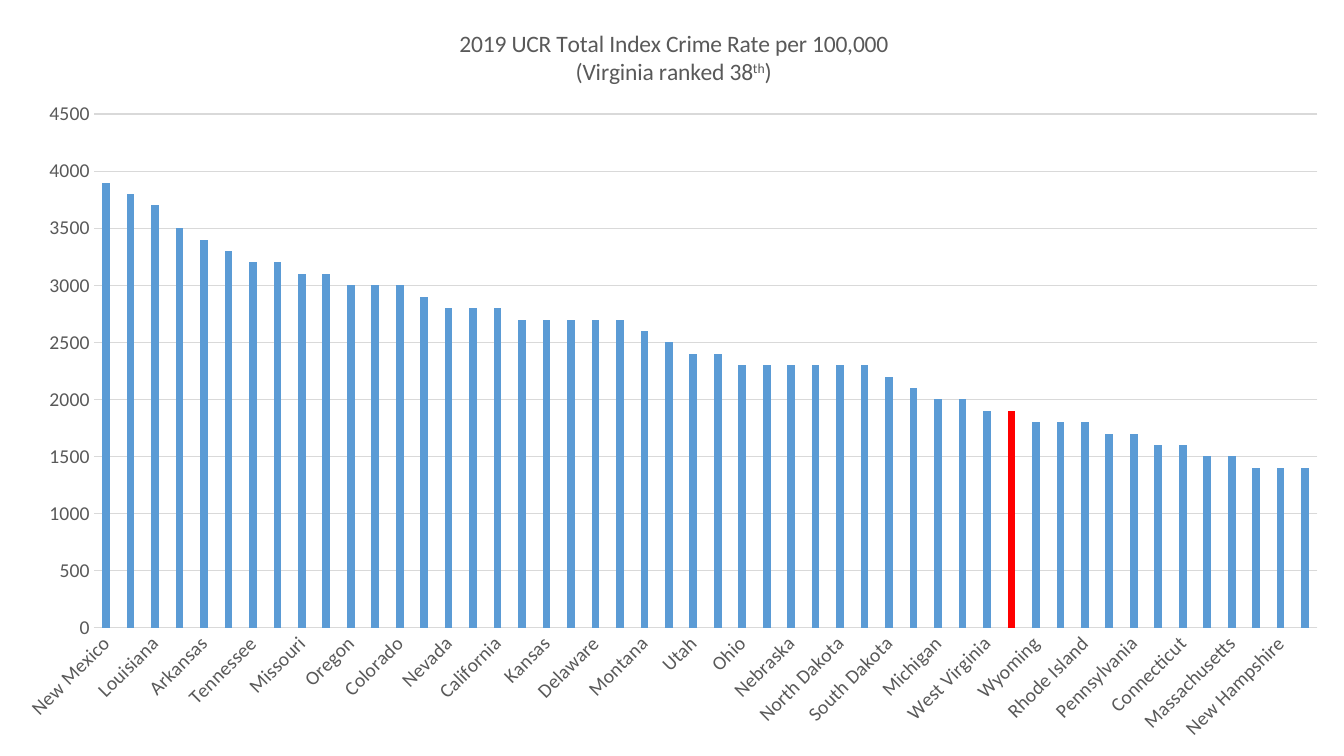
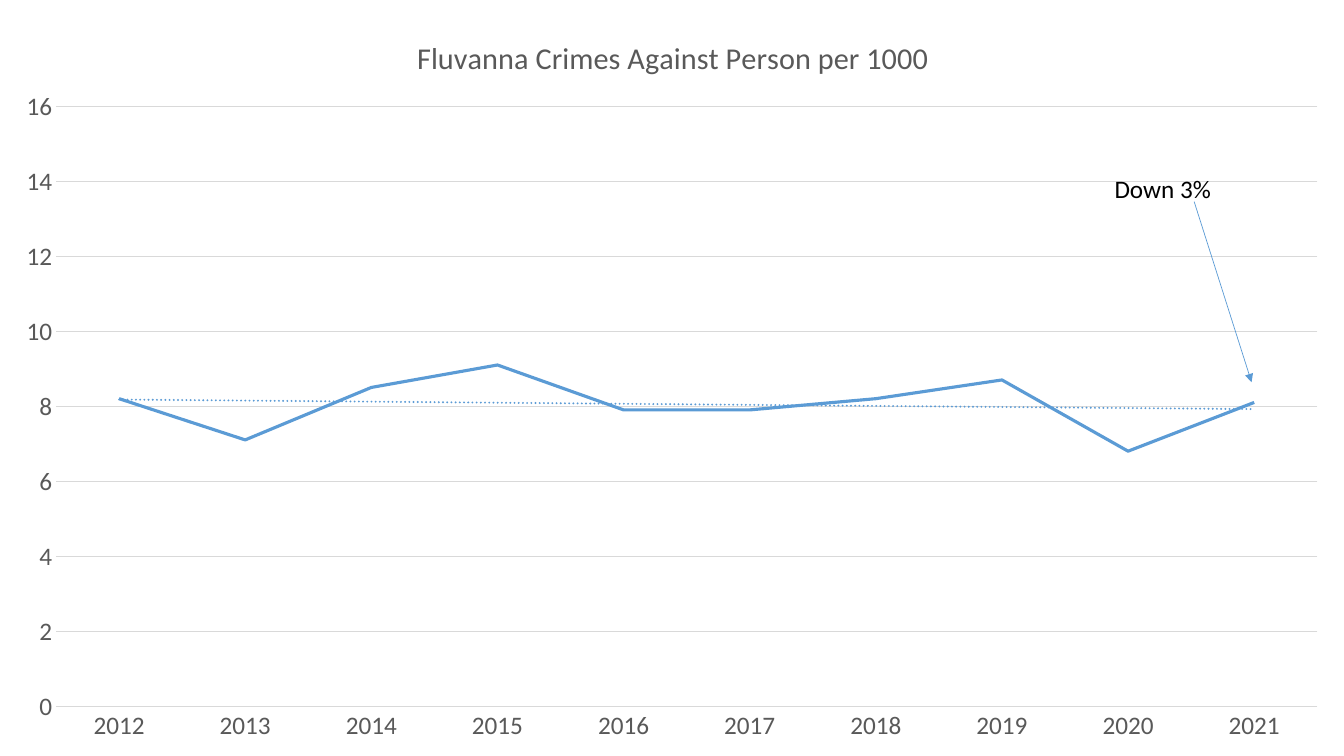
from dataclasses import dataclass

from lxml import etree
from pptx import Presentation
from pptx.chart.data import CategoryChartData
from pptx.dml.color import RGBColor
from pptx.enum import chart as chart_enum, shapes, text
from pptx.oxml import parse_xml
from pptx.oxml.ns import nsdecls, qn
from pptx.util import Pt

SLIDE_WIDTH, SLIDE_HEIGHT = Pt(960), Pt(540)
FONT = "Calibri"
BLUE = RGBColor(0x5B, 0x9B, 0xD5)
RED = RGBColor(0xFF, 0x00, 0x00)
BLACK = RGBColor(0x00, 0x00, 0x00)
LABEL_GRAY = RGBColor(0x59, 0x59, 0x59)
GRID_GRAY = RGBColor(0xD9, 0xD9, 0xD9)

STATE_RATES = {
    "New Mexico": 3900, "Alaska": 3800, "Louisiana": 3700, "South Carolina": 3500,
    "Arkansas": 3400, "Oklahoma": 3300, "Tennessee": 3200, "Alabama": 3200,
    "Missouri": 3100, "Hawaii": 3100, "Oregon": 3000, "Washington": 3000,
    "Colorado": 3000, "Arizona": 2900, "Nevada": 2800, "Texas": 2800,
    "California": 2800, "North Carolina": 2700, "Kansas": 2700, "Georgia": 2700,
    "Delaware": 2700, "Mississippi": 2700, "Montana": 2600, "Florida": 2500,
    "Utah": 2400, "Maryland": 2400, "Ohio": 2300, "Indiana": 2300,
    "Nebraska": 2300, "Minnesota": 2300, "North Dakota": 2300, "Illinois": 2300,
    "South Dakota": 2200, "Kentucky": 2100, "Michigan": 2000, "Iowa": 2000,
    "West Virginia": 1900, "Virginia": 1900, "Wyoming": 1800, "Wisconsin": 1800,
    "Rhode Island": 1800, "New York": 1700, "Pennsylvania": 1700, "Vermont": 1600,
    "Connecticut": 1600, "New Jersey": 1500, "Massachusetts": 1500, "Idaho": 1400,
    "New Hampshire": 1400, "Maine": 1400,
}
FLUVANNA_RATES = dict(zip(
    map(str, range(2012, 2022)),
    (8.2, 7.1, 8.5, 9.1, 7.9, 7.9, 8.2, 8.7, 6.8, 8.1),
))


@dataclass(frozen=True)
class TitleRun:
    text: str
    superscript: bool = False


@dataclass(frozen=True)
class ChartSlide:
    """Title position and plot box (left, top, width, height) are in points."""
    kind: chart_enum.XL_CHART_TYPE
    rates: dict[str, float]
    title: tuple[tuple[TitleRun, ...], ...]
    title_size: float
    title_position: tuple[float, float]
    plot_box: tuple[float, float, float, float]
    label_size: float
    maximum: float
    step: float


STATE_CHART = ChartSlide(
    kind=chart_enum.XL_CHART_TYPE.COLUMN_CLUSTERED,
    rates=STATE_RATES,
    title=(
        (TitleRun("2019 UCR Total Index Crime Rate per 100,000"),),
        (TitleRun("(Virginia ranked 38"), TitleRun("th", True), TitleRun(")")),
    ),
    title_size=16.8,
    title_position=(326, 18),
    plot_box=(67, 81.5, 874, 367),
    label_size=14,
    maximum=4500,
    step=500,
)
FLUVANNA_CHART = ChartSlide(
    kind=chart_enum.XL_CHART_TYPE.LINE,
    rates=FLUVANNA_RATES,
    title=((TitleRun("Fluvanna Crimes Against Person per 1000"),),),
    title_size=21.6,
    title_position=(294, 22),
    plot_box=(40, 76, 901, 428.5),
    label_size=18,
    maximum=16,
    step=2,
)


def style_font(font, size: float, color: RGBColor) -> None:
    font.name = FONT
    font.size = Pt(size)
    font.bold = False
    font.color.rgb = color


def style_line(line, color: RGBColor, width: float) -> None:
    line.color.rgb = color
    line.width = Pt(width)


def place(element, index: int, box: tuple[float, ...], inner: bool = False) -> None:
    """Give a chart part a manual layout, as fractions of the slide."""
    for old in element.findall(qn("c:layout")):
        element.remove(old)
    layout = parse_xml(f"<c:layout {nsdecls('c')}><c:manualLayout/></c:layout>")
    entries = [("layoutTarget", "inner")] if inner else []
    entries += [("xMode", "edge"), ("yMode", "edge")]
    for name, value, extent in zip("xywh", box, (960, 540) * 2):
        entries.append((name, f"{value / extent:.4f}"))
    for name, value in entries:
        etree.SubElement(layout[0], qn(f"c:{name}")).set("val", value)
    element.insert(index, layout)


def add_title(chart, content: ChartSlide) -> None:
    chart.has_title = True
    frame = chart.chart_title.text_frame
    for number, line in enumerate(content.title):
        paragraph = frame.add_paragraph() if number else frame.paragraphs[0]
        for part in line:
            run = paragraph.add_run()
            run.text = part.text
            style_font(run.font, content.title_size, LABEL_GRAY)
            if part.superscript:
                run._r.get_or_add_rPr().set("baseline", "30000")
    place(chart.chart_title._element, 1, content.title_position)


def style_axes(chart, content: ChartSlide) -> None:
    for axis in (chart.category_axis, chart.value_axis):
        axis.major_tick_mark = chart_enum.XL_TICK_MARK.NONE
        axis.minor_tick_mark = chart_enum.XL_TICK_MARK.NONE
        style_font(axis.tick_labels.font, content.label_size, LABEL_GRAY)
    chart.category_axis.has_major_gridlines = False
    style_line(chart.category_axis.format.line, GRID_GRAY, 0.75)
    value_axis = chart.value_axis
    value_axis.minimum_scale = 0
    value_axis.maximum_scale = content.maximum
    value_axis.major_unit = content.step
    value_axis.format.line.fill.background()
    value_axis.has_major_gridlines = True
    style_line(value_axis.major_gridlines.format.line, GRID_GRAY, 0.75)


def add_rate_chart(slide, content: ChartSlide):
    data = CategoryChartData()
    data.categories = list(content.rates)
    data.add_series("Series 1", list(content.rates.values()))
    chart = slide.shapes.add_chart(
        content.kind, 0, 0, SLIDE_WIDTH, SLIDE_HEIGHT, data
    ).chart
    style_font(chart.font, content.label_size, BLACK)
    chart.has_legend = False
    chart.plots[0].vary_by_categories = False
    add_title(chart, content)
    style_axes(chart, content)
    place(chart._chartSpace.chart.plotArea, 0, content.plot_box, inner=True)
    return chart


def style_state_columns(chart) -> None:
    plot = chart.plots[0]
    plot.gap_width = 219
    plot.overlap = -27
    series = plot.series[0]
    series.invert_if_negative = False
    virginia = series.points[list(STATE_RATES).index("Virginia")]
    for part, color in ((series, BLUE), (virginia, RED)):
        part.format.fill.solid()
        part.format.fill.fore_color.rgb = color
    chart.category_axis._element.txPr.bodyPr.set("rot", "-2700000")


def style_fluvanna_line(chart) -> None:
    series = chart.plots[0].series[0]
    series.smooth = False
    series.marker.style = chart_enum.XL_MARKER_STYLE.NONE
    style_line(series.format.line, BLUE, 2.25)
    trendline = parse_xml(
        f"<c:trendline {nsdecls('c', 'a')}><c:spPr>"
        f'<a:ln w="{Pt(1.5)}" cap="rnd"><a:solidFill><a:srgbClr val="{BLUE}"/>'
        '</a:solidFill><a:prstDash val="sysDot"/></a:ln></c:spPr>'
        '<c:trendlineType val="linear"/><c:dispRSqr val="0"/>'
        '<c:dispEq val="0"/></c:trendline>'
    )
    series._element.find(qn("c:cat")).addprevious(trendline)


def add_change_callout(slide) -> None:
    box = slide.shapes.add_textbox(Pt(789), Pt(120), Pt(84), Pt(29))
    box.text_frame.word_wrap = False
    box.text_frame.auto_size = text.MSO_AUTO_SIZE.SHAPE_TO_FIT_TEXT
    run = box.text_frame.paragraphs[0].add_run()
    run.text = "Down 3%"
    style_font(run.font, 18, BLACK)

    arrow = slide.shapes.add_connector(
        shapes.MSO_CONNECTOR.STRAIGHT, Pt(853), Pt(144), Pt(894), Pt(273)
    )
    style_line(arrow.line, BLUE, 0.5)
    etree.SubElement(arrow.line._get_or_add_ln(), qn("a:tailEnd")).set("type", "triangle")
    etree.SubElement(arrow._element.spPr, qn("a:effectLst"))


def main() -> None:
    presentation = Presentation()
    presentation.slide_width = SLIDE_WIDTH
    presentation.slide_height = SLIDE_HEIGHT
    blank_layout = presentation.slide_layouts[6]

    state_slide = presentation.slides.add_slide(blank_layout)
    style_state_columns(add_rate_chart(state_slide, STATE_CHART))

    fluvanna_slide = presentation.slides.add_slide(blank_layout)
    style_fluvanna_line(add_rate_chart(fluvanna_slide, FLUVANNA_CHART))
    add_change_callout(fluvanna_slide)

    presentation.save("out.pptx")


if __name__ == "__main__":
    main()
